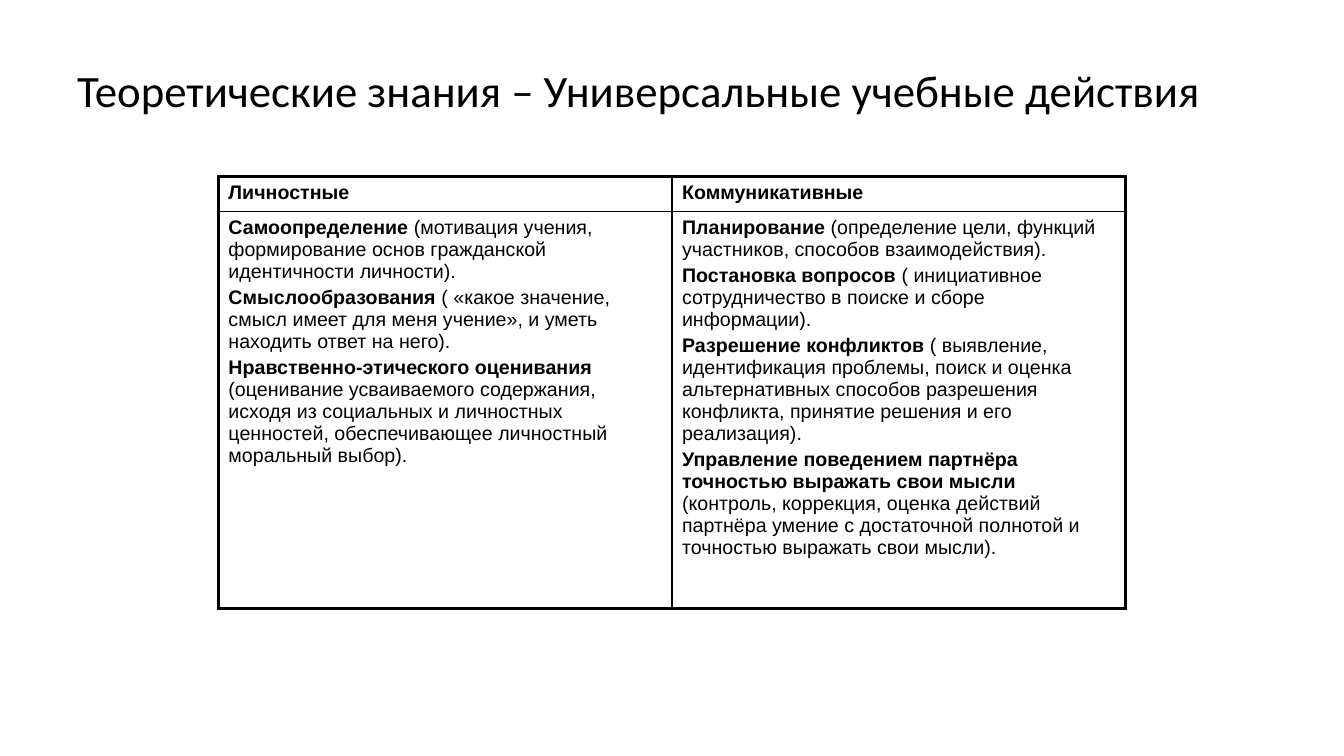
"""Build a slide with a two-column table of universal learning actions."""
from dataclasses import dataclass

from lxml import etree
from pptx import Presentation
from pptx.dml.color import RGBColor
from pptx.enum import text as t
from pptx.oxml import ns
from pptx.util import Pt


@dataclass(frozen=True)
class Theme:
    """Colours, fonts, type sizes and line widths."""
    ink: str = "000000"
    head_font: str = "Calibri"
    body_font: str = "Arial"
    head_size: float = 32
    body_size: float = 14
    gap: float = 2.8
    thin: float = 1
    thick: float = 2.25


THEME = Theme()

TITLE = "Теоретические знания – Универсальные учебные действия"
HEADS = ["Личностные", "Коммуникативные"]
SKILLS = [
    [
        ("Самоопределение", " (мотивация учения, формирование основ гражданской "
         "идентичности личности)."),
        ("Смыслообразования ", "( «какое значение, смысл имеет для меня учение», "
         "и уметь находить ответ на него)."),
        ("Нравственно-этического оценивания ", "(оценивание усваиваемого содержания, "
         "исходя из социальных и личностных ценностей, обеспечивающее личностный "
         "моральный выбор)."),
    ],
    [
        ("Планирование ", "(определение цели, функций участников, способов "
         "взаимодействия)."),
        ("Постановка вопросов ", "( инициативное сотрудничество в поиске и сборе "
         "информации)."),
        ("Разрешение конфликтов", " ( выявление, идентификация проблемы, поиск и оценка "
         "альтернативных способов разрешения конфликта, принятие решения и его "
         "реализация)."),
        ("Управление поведением партнёра точностью выражать свои мысли ",
         "(контроль, коррекция, оценка действий партнёра умение с достаточной полнотой "
         "и точностью выражать свои мысли)."),
    ],
]


def write(par, words, font=THEME.body_font, size=THEME.body_size, bold=False):
    """Add a formatted run to a paragraph."""
    run = par.add_run()
    run.text = words
    run.font.name = font
    run.font.size = Pt(size)
    run.font.bold = bold
    run.font.color.rgb = RGBColor.from_string(THEME.ink)


def add_title(slide):
    """Place the slide title."""
    box = slide.shapes.add_textbox(Pt(48), Pt(21.6), Pt(864), Pt(90))
    frame = box.text_frame
    frame.word_wrap = True
    frame.vertical_anchor = t.MSO_ANCHOR.MIDDLE
    par = frame.paragraphs[0]
    par.line_spacing = 0.9
    write(par, TITLE, font=THEME.head_font, size=THEME.head_size)


def add_edge(cell, side, width):
    """Draw one border of a cell."""
    props = cell._tc.get_or_add_tcPr()
    line = etree.SubElement(props, ns.qn(f"a:ln{side}"), w=str(Pt(width)))
    fill = etree.SubElement(line, ns.qn("a:solidFill"))
    etree.SubElement(fill, ns.qn("a:srgbClr"), val=THEME.ink)


def fill_cell(cell, items, outer):
    """Write bold terms with their notes, and border the cell."""
    for i, (term, note) in enumerate(items):
        frame = cell.text_frame
        par = frame.add_paragraph() if i else frame.paragraphs[0]
        if i:
            par.space_before = Pt(THEME.gap)
        write(par, term, bold=True)
        if note:
            write(par, note)
    for side in "LRTB":
        add_edge(cell, side, THEME.thick if side in outer else THEME.thin)
    cell.fill.background()


def add_grid(slide):
    """Place the table of skills."""
    rows = [[[(head, "")] for head in HEADS], SKILLS]
    table = slide.shapes.add_table(2, 2, Pt(156), Pt(126), Pt(648), Pt(308.5)).table
    table.first_row = table.horz_banding = False
    for row, high in zip(table.rows, (25, 283.5)):
        row.height = Pt(high)
    for r, row in enumerate(rows):
        for c, items in enumerate(row):
            fill_cell(table.cell(r, c), items, "TB"[r] + "LR"[c])


def main():
    """Build and save the slide."""
    deck = Presentation()
    deck.slide_width, deck.slide_height = Pt(960), Pt(540)
    slide = deck.slides.add_slide(deck.slide_layouts[6])
    add_title(slide)
    add_grid(slide)
    deck.save("out.pptx")


if __name__ == "__main__":
    main()
